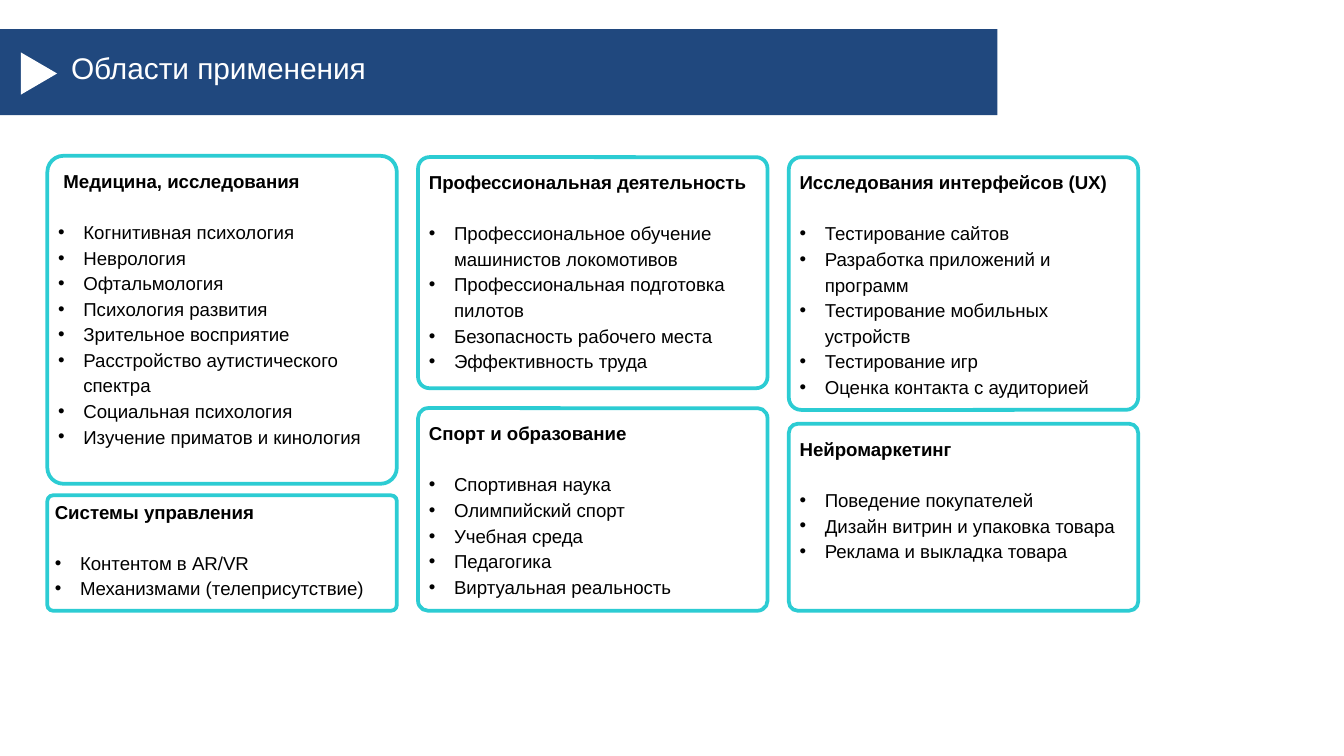
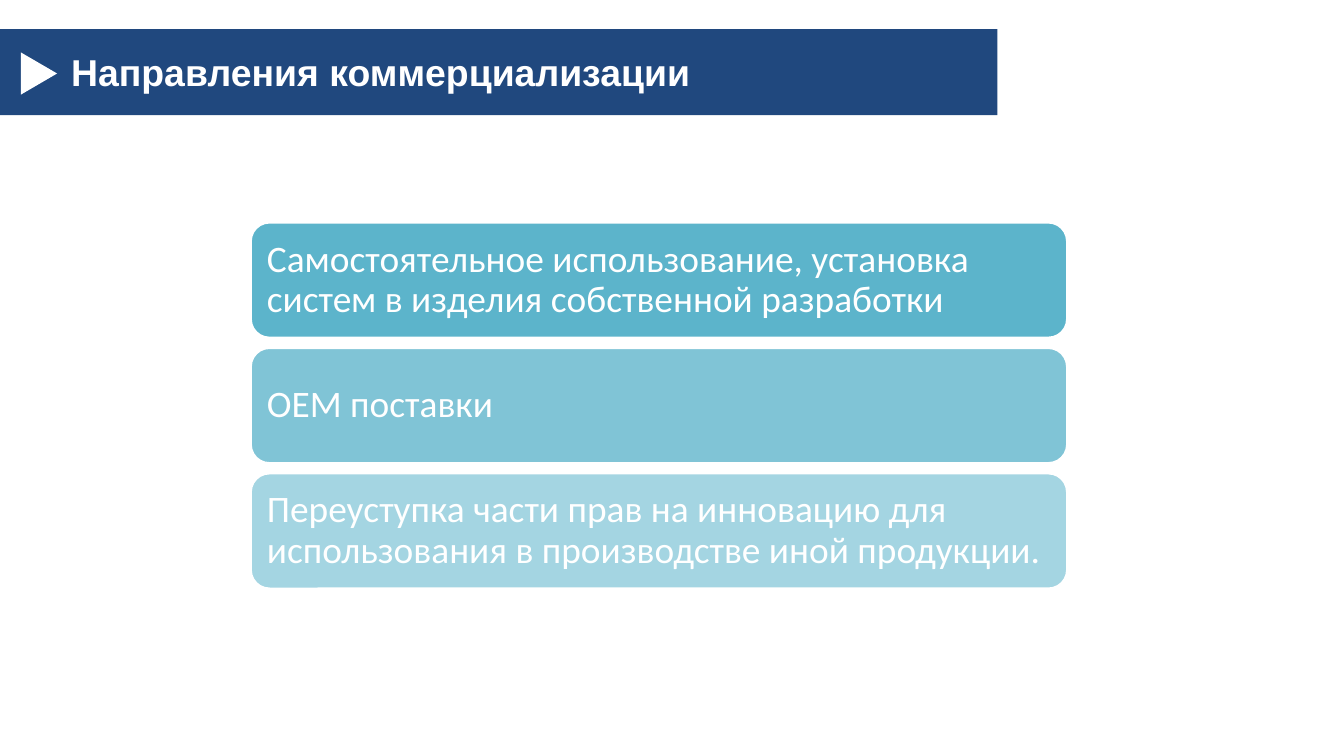
from lxml.etree import SubElement
from pptx import Presentation
from pptx.dml.color import RGBColor
from pptx.enum.shapes import MSO_SHAPE as Shape
from pptx.enum.text import MSO_ANCHOR as Anchor, MSO_AUTO_SIZE as AutoSize, PP_ALIGN as Align
from pptx.oxml.ns import qn
from pptx.util import Pt

NAVY, TURQUOISE, AQUA = "20487E", "2CCCD3", "4BACC6"
WHITE, BLACK = "FFFFFF", "000000"
LINE_HEIGHT = 13.7
BULLET_INDENT = 13.5
CARD_WIDTH = 187.2
CARD_TEXT_WIDTH = 175.7


def color(value):
    return RGBColor.from_string(value)


class Builder:
    def __init__(self, deck):
        self.deck = deck
        self.page = None

    def start_page(self, title, size, bold=False):
        self.page = self.deck.slides.add_slide(self.deck.slide_layouts[6])
        self.shape(Shape.RECTANGLE, 0, 15.6, 534.4, 46.2, fill=NAVY)
        pointer = self.shape(Shape.ISOSCELES_TRIANGLE, 9.6, 29.7, 22.6, 19.4, fill=WHITE)
        pointer.rotation = 90
        frame = self.text_box(31, 26.6, 503.4, size * 1.22, side_inset=7.2)
        self.span(frame.paragraphs[0], title, size, WHITE, bold)

    def shape(self, kind, left, top, width, height, fill=None, alpha=None, line=None, corner=None):
        shape = self.page.shapes.add_shape(kind, Pt(left), Pt(top), Pt(width), Pt(height))
        shape.shadow.inherit = False
        if corner is not None:
            shape.adjustments[0] = corner
        if fill:
            shape.fill.solid()
            shape.fill.fore_color.rgb = color(fill)
        else:
            shape.fill.background()
        if alpha:
            tone = shape.fill._xPr.find(f"{qn('a:solidFill')}/{qn('a:srgbClr')}")
            SubElement(tone, qn("a:alpha"), val=str(alpha * 1000))
        if line:
            shape.line.color.rgb = color(line)
            shape.line.width = Pt(2)
        else:
            shape.line.fill.background()
        return shape

    def text_box(self, left, top, width, height, side_inset=0):
        box = self.page.shapes.add_textbox(Pt(left), Pt(top), Pt(width), Pt(height))
        frame = box.text_frame
        frame.word_wrap = True
        frame.auto_size = AutoSize.SHAPE_TO_FIT_TEXT
        frame.margin_left = frame.margin_right = Pt(side_inset)
        frame.margin_top = frame.margin_bottom = 0
        return frame

    def span(self, para, text, size, tone, bold=False, font="Arial"):
        span = para.add_run()
        span.text = text
        span.font.name = font
        span.font.size = Pt(size)
        span.font.bold = bold
        span.font.color.rgb = color(tone)

    def bullet(self, para):
        properties = para._p.get_or_add_pPr()
        properties.set("marL", str(Pt(BULLET_INDENT)))
        properties.set("indent", str(-Pt(BULLET_INDENT)))
        SubElement(properties, qn("a:buFont"), typeface="Arial")
        SubElement(properties, qn("a:buChar"), char="•")

    def card(self, left, top, height, heading, items, lines, offset=(5.8, 5.8), heading_indent=0):
        self.shape(Shape.ROUNDED_RECTANGLE, left, top, CARD_WIDTH, height,
                   line=TURQUOISE, corner=0.049)
        frame = self.text_box(left + offset[0], top + offset[1],
                              CARD_TEXT_WIDTH, lines * LINE_HEIGHT)
        para = frame.paragraphs[0]
        para.line_spacing = 1.14
        if heading_indent:
            para._p.get_or_add_pPr().set("indent", str(Pt(heading_indent)))
        self.span(para, heading, 10, BLACK, bold=True)
        for index, item in enumerate(items):
            para = frame.add_paragraph()
            self.bullet(para)
            para.line_spacing = 1.14
            if index == 0:
                para.space_before = Pt(LINE_HEIGHT)
            self.span(para, item, 10, BLACK)

    def panel(self, top, text, alpha):
        panel = self.shape(Shape.ROUNDED_RECTANGLE, 133.9, top, 438.2, 62.6,
                           fill=AQUA, alpha=alpha, line=WHITE)
        frame = panel.text_frame
        frame.word_wrap = True
        frame.vertical_anchor = Anchor.MIDDLE
        frame.margin_left = frame.margin_right = Pt(6)
        frame.margin_top = frame.margin_bottom = Pt(6)
        para = frame.paragraphs[0]
        para.alignment = Align.LEFT
        para.line_spacing = 0.9
        self.span(para, text, 20, WHITE, font="Calibri")


def build_applications(builder):
    builder.start_page("Области применения", 16)
    left, middle, right = (25.4 + 198.6 * column for column in range(3))
    builder.card(left, 83.5, 175.7, "Медицина, исследования", [
        "Когнитивная психология",
        "Неврология",
        "Офтальмология",
        "Психология развития",
        "Зрительное восприятие",
        "Расстройство аутистического спектра",
        "Социальная психология",
        "Изучение приматов и кинология",
    ], lines=11, heading_indent=2.8)
    builder.card(middle, 84.2, 123.8, "Профессиональная деятельность", [
        "Профессиональное обучение машинистов локомотивов",
        "Профессиональная подготовка пилотов",
        "Безопасность рабочего места",
        "Эффективность труда",
    ], lines=8)
    builder.card(right, 84.2, 135.4, "Исследования интерфейсов (UX)", [
        "Тестирование сайтов",
        "Разработка приложений и программ",
        "Тестирование мобильных устройств",
        "Тестирование игр",
        "Оценка контакта с аудиторией",
    ], lines=9)
    builder.card(middle, 218.7, 108.5, "Спорт и образование", [
        "Спортивная наука",
        "Олимпийский спорт",
        "Учебная среда",
        "Педагогика",
        "Виртуальная реальность",
    ], lines=7)
    builder.card(right, 227, 100.2, "Нейромаркетинг", [
        "Поведение покупателей",
        "Дизайн витрин и упаковка товара",
        "Реклама и выкладка товара",
    ], lines=5)
    builder.card(left, 265.4, 61.8, "Системы управления", [
        "Контентом в АR/VR",
        "Механизмами (телеприсутствие)",
    ], lines=4, offset=(4, 1))


def build_commercialization(builder):
    builder.start_page("Направления коммерциализации", 20, bold=True)
    directions = [
        "Самостоятельное использование, установка систем в изделия собственной разработки",
        "OEM поставки",
        "Переуступка части прав на инновацию для использования в производстве иной продукции.",
    ]
    for index, text in enumerate(directions):
        builder.panel(118.8 + 67.2 * index, text, 90 - 20 * index)


def main():
    deck = Presentation()
    deck.slide_width, deck.slide_height = Pt(720), Pt(405)
    builder = Builder(deck)
    build_applications(builder)
    build_commercialization(builder)
    deck.save("out.pptx")


if __name__ == "__main__":
    main()
